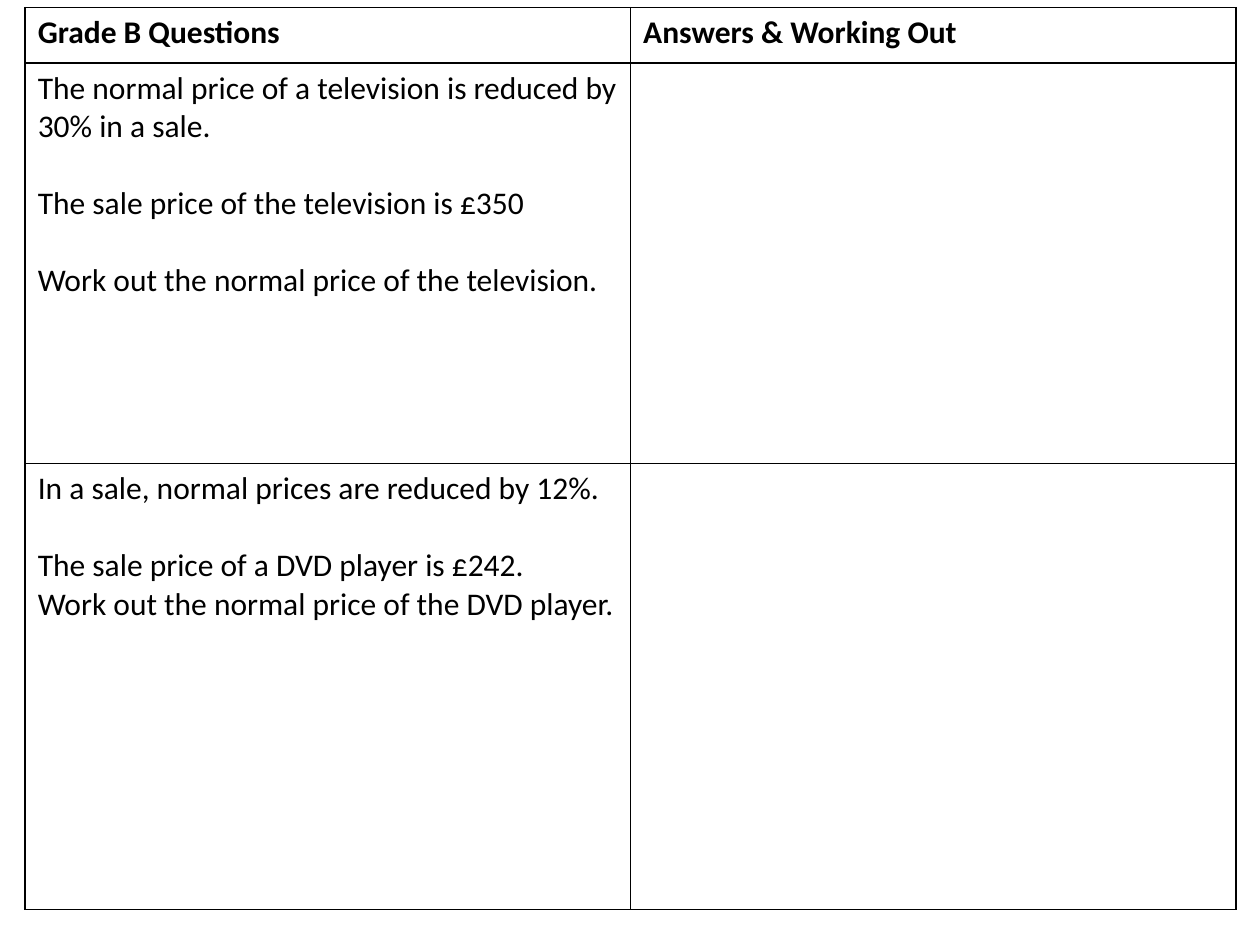
from dataclasses import dataclass

from lxml import etree
from pptx import Presentation
from pptx import util as u
from pptx.dml.color import RGBColor
from pptx.oxml.ns import qn


@dataclass(frozen=True)
class Theme:
    font: str = "Calibri"
    size: float = 18
    paragraph_gap: float = 22
    ink: str = "000000"
    paper: str = "FFFFFF"
    border: float = 1


THEME = Theme()
HEADINGS = ("Grade B Questions", "Answers & Working Out")
# Each question is a list of (text, starts a new block) lines.
QUESTIONS = (
    (
        ("The normal price of a television is reduced by 30% in a sale.", False),
        ("The sale price of the television is £350", True),
        ("Work out the normal price of the television.", True),
    ),
    (
        ("In a sale, normal prices are reduced by 12%.", False),
        ("The sale price of a DVD player is £242.", True),
        ("Work out the normal price of the DVD player.", False),
    ),
)
ROW_HEIGHTS = (0.44, 3.18, 3.54)


def style_cell(cell):
    cell.fill.solid()
    cell.fill.fore_color.rgb = RGBColor.from_string(THEME.paper)
    properties = cell._tc.get_or_add_tcPr()
    for position, side in enumerate(("lnL", "lnR", "lnT", "lnB")):
        line = etree.Element(qn(f"a:{side}"), w=str(u.Pt(THEME.border)))
        fill = etree.SubElement(line, qn("a:solidFill"))
        etree.SubElement(fill, qn("a:srgbClr"), val=THEME.ink)
        properties.insert(position, line)


def write_lines(cell, lines, bold=False):
    frame = cell.text_frame
    frame.text = "\n".join(line for line, _ in lines)
    for paragraph, (_, new_block) in zip(frame.paragraphs, lines):
        if new_block:
            paragraph.space_before = u.Pt(THEME.paragraph_gap)
        for run in paragraph.runs:
            run.font.name = THEME.font
            run.font.size = u.Pt(THEME.size)
            run.font.bold = bold
            run.font.color.rgb = RGBColor.from_string(THEME.ink)


def add_worksheet(slide, left, top, width, row_heights):
    """Place headings above one row per question, with blank answer cells."""
    table = slide.shapes.add_table(
        len(row_heights), len(HEADINGS),
        u.Inches(left), u.Inches(top), u.Inches(width), u.Inches(sum(row_heights)),
    ).table
    table.horz_banding = False
    for row, height in zip(table.rows, row_heights):
        row.height = u.Inches(height)
    for cell in table.iter_cells():
        style_cell(cell)
    for column, heading in enumerate(HEADINGS):
        write_lines(table.cell(0, column), [(heading, False)], bold=True)
    for row, question in enumerate(QUESTIONS, start=1):
        write_lines(table.cell(row, 0), question)


def main():
    presentation = Presentation()
    presentation.slide_width = u.Inches(10)
    presentation.slide_height = u.Inches(7.5)
    slide = presentation.slides.add_slide(presentation.slide_layouts[6])
    add_worksheet(slide, 0.2, 0.06, 9.61, ROW_HEIGHTS)
    presentation.save("out.pptx")


if __name__ == "__main__":
    main()
